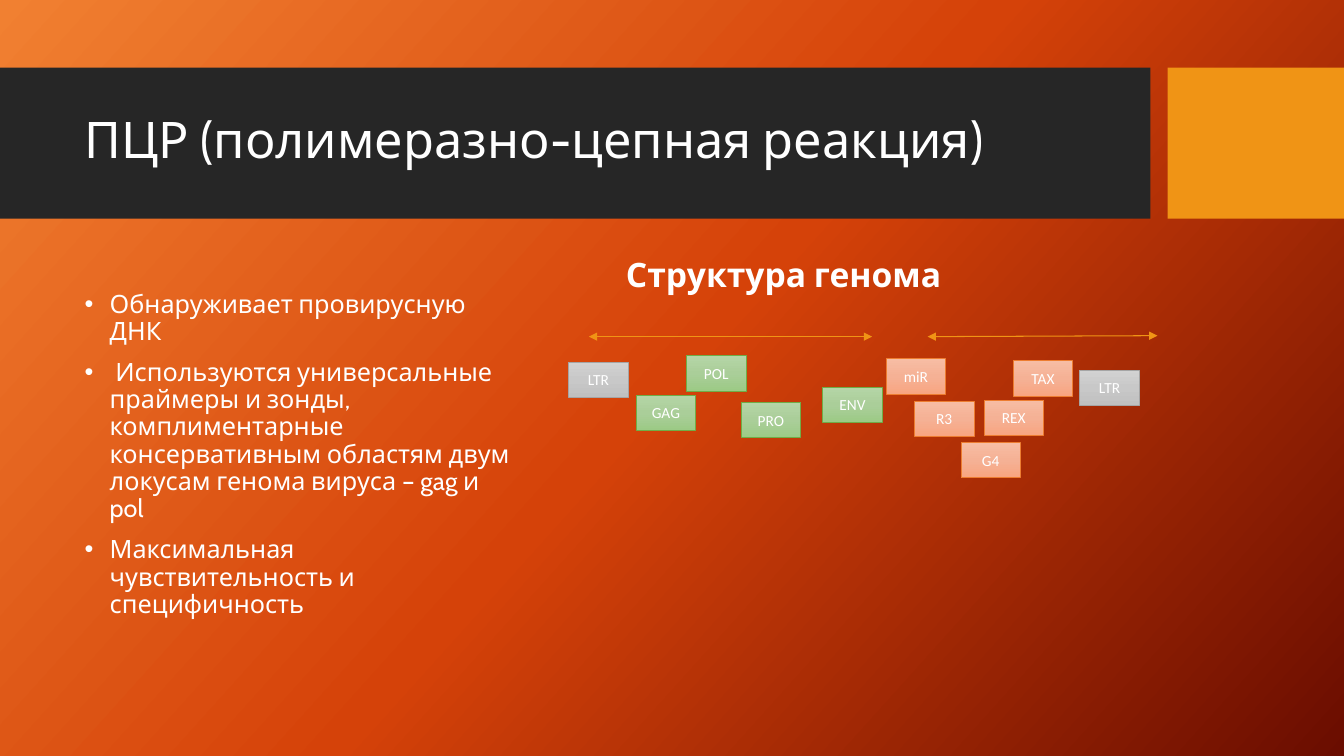
from lxml.etree import SubElement
from pptx import Presentation
from pptx.dml.color import RGBColor
from pptx.enum.shapes import MSO_CONNECTOR as Connector, MSO_SHAPE as Shape
from pptx.enum.text import MSO_ANCHOR as Anchor, MSO_AUTO_SIZE as AutoSize, PP_ALIGN as Align
from pptx.oxml.ns import qn
from pptx.util import Inches, Pt

COLORS = {"white": "FFFFFF", "band": "262626", "accent": "F09415"}
BACKGROUND = ("F18031", "D54209", "6A0D00")
GENE_STYLES = {
    "repeat": (("D2D2D2", "C8C8C8", "C0C0C0"), "A5A5A5"),
    "structural": (("B5D5A7", "AACE99", "9CCA86"), "70AD47"),
    "regulatory": (("F7BDA4", "F5B195", "F8A581"), "ED7D31"),
}
GENES = [
    ("LTR", "repeat", 0, 0.26),
    ("GAG", "structural", 0.67, 0.59),
    ("POL", "structural", 1.17, 0.2),
    ("PRO", "structural", 1.71, 0.66),
    ("ENV", "structural", 2.52, 0.51),
    ("miR", "regulatory", 3.15, 0.23),
    ("R3", "regulatory", 3.43, 0.65),
    ("G4", "regulatory", 3.89, 1.06),
    ("REX", "regulatory", 4.12, 0.64),
    ("TAX", "regulatory", 4.41, 0.25),
    ("LTR", "repeat", 5.07, 0.34),
]
SPANS = [(0.2, 0.01, 3.01, 0.01), (3.56, 0.01, 5.84, 0)]
POINTS = [
    "Обнаруживает провирусную ДНК",
    " Используются универсальные праймеры и зонды, комплиментарные "
    "консервативным областям двум локусам генома вируса – gag и pol",
    "Максимальная чувствительность и специфичность",
]


def rgb(value):
    return RGBColor.from_string(value)


def apply_gradient(fill, element, colors, angle):
    fill.gradient()
    gradient = element.find(".//" + qn("a:gradFill"))
    stops = gradient.find(qn("a:gsLst"))
    for stop in list(stops):
        stops.remove(stop)
    for index, color in enumerate(colors):
        stop = SubElement(stops, qn("a:gs"), pos=str(index * 50000))
        SubElement(stop, qn("a:srgbClr"), val=color)
    direction = gradient.find(qn("a:lin"))
    direction.set("ang", str(angle * 60000))
    direction.set("scaled", "0")


def format_para(para, size, font="Cabin", bold=False, align=Align.LEFT, spacing=0.9):
    para.alignment = align
    para.line_spacing = spacing
    for span in para.runs:
        span.font.name = font
        span.font.size = Pt(size)
        span.font.bold = bold
        span.font.color.rgb = rgb(COLORS["white"])


def add_rectangle(page, left, top, width, height):
    box = page.shapes.add_shape(
        Shape.RECTANGLE, Inches(left), Inches(top), Inches(width), Inches(height))
    box.shadow.inherit = False
    return box


def add_text_box(page, left, top, width, height):
    box = page.shapes.add_textbox(Inches(left), Inches(top), Inches(width), Inches(height))
    box.text_frame.word_wrap = True
    return box.text_frame


def add_header(page, left, top, width, height):
    square = 1.75
    gap = 0.17
    band = width - square - gap
    for offset, length, color in ((0, band, "band"), (band + gap, square, "accent")):
        bar = add_rectangle(page, left + offset, top, length, height)
        bar.fill.solid()
        bar.fill.fore_color.rgb = rgb(COLORS[color])
        bar.line.fill.background()
    title = page.shapes.title
    page.shapes._spTree.append(title._element)
    title.left, title.top = Inches(left + 0.74), Inches(top + 0.15)
    title.width, title.height = Inches(band - 0.9), Inches(height - 0.32)
    frame = title.text_frame
    frame.text = "ПЦР (полимеразно-цепная реакция)"
    frame.word_wrap = True
    frame.auto_size = AutoSize.NONE
    frame.vertical_anchor = Anchor.MIDDLE
    format_para(frame.paragraphs[0], 36)


def add_points(page, left, top, width, height):
    frame = add_text_box(page, left, top, width, height)
    for index, point in enumerate(POINTS):
        para = frame.add_paragraph() if index else frame.paragraphs[0]
        para.text = point
        properties = para._p.get_or_add_pPr()
        properties.set("marL", str(Inches(0.25)))
        properties.set("indent", str(-Inches(0.25)))
        SubElement(properties, qn("a:buFont"), typeface="Arial")
        SubElement(properties, qn("a:buChar"), char="•")
        format_para(para, 18)
        if index:
            para.space_before = Pt(10)


def add_heading(page, left, top, width, height):
    frame = add_text_box(page, left, top, width, height)
    frame.vertical_anchor = Anchor.BOTTOM
    frame.text = "Структура генома"
    format_para(frame.paragraphs[0], 24, bold=True)


def add_arrow(page, start_x, start_y, end_x, end_y):
    arrow = page.shapes.add_connector(
        Connector.STRAIGHT, Inches(start_x), Inches(start_y), Inches(end_x), Inches(end_y))
    arrow.line.color.rgb = rgb(COLORS["accent"])
    arrow.line.width = Pt(0.75)
    outline = arrow.line._get_or_add_ln()
    for end in ("a:headEnd", "a:tailEnd"):
        SubElement(outline, qn(end), type="triangle")
    SubElement(arrow._element.spPr, qn("a:effectLst"))


def add_gene(page, name, style, left, top):
    colors, edge = GENE_STYLES[style]
    gene = add_rectangle(page, left, top, 0.59, 0.35)
    apply_gradient(gene.fill, gene._element, colors, 90)
    gene.line.color.rgb = rgb(edge)
    gene.line.width = Pt(0.5)
    gene.text_frame.text = name
    gene.text_frame.vertical_anchor = Anchor.MIDDLE
    format_para(gene.text_frame.paragraphs[0], 11, "Calibri", align=Align.CENTER, spacing=1.0)


def add_genome(page, left, top):
    for start_x, start_y, end_x, end_y in SPANS:
        add_arrow(page, left + start_x, top + start_y, left + end_x, top + end_y)
    for name, style, across, down in GENES:
        add_gene(page, name, style, left + across, top + down)


def main():
    deck = Presentation()
    deck.slide_width, deck.slide_height = Inches(13.33), Inches(7.5)
    page = deck.slides.add_slide(deck.slide_layouts[5])
    apply_gradient(page.background.fill, page._element, BACKGROUND, 42)
    add_header(page, 0, 0.67, 13.33, 1.5)
    add_points(page, 0.74, 2.84, 4.43, 3.65)
    add_heading(page, 6.11, 2.43, 4.89, 0.54)
    add_genome(page, 5.64, 3.33)
    deck.save("out.pptx")


if __name__ == "__main__":
    main()
